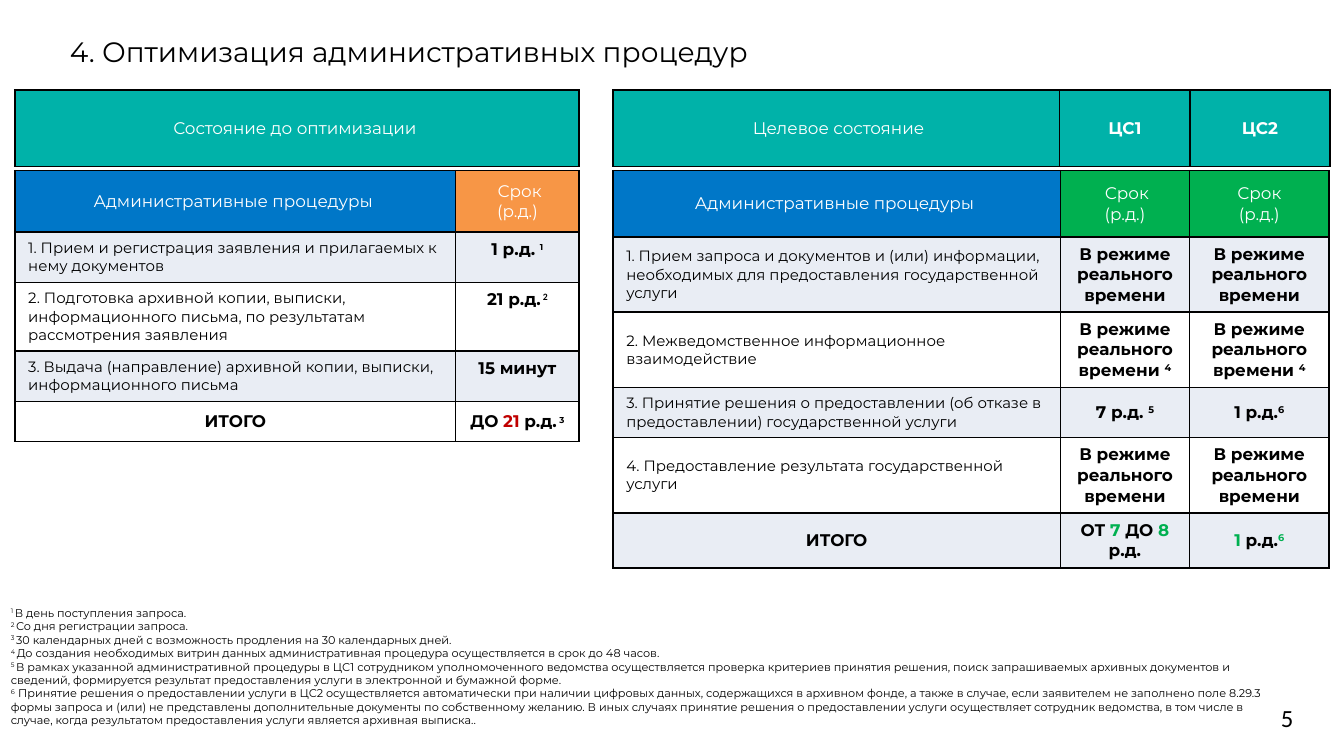
from lxml import etree
from pptx import Presentation
from pptx.dml.color import RGBColor
from pptx.enum.text import MSO_ANCHOR, PP_ALIGN
from pptx.oxml.ns import qn
from pptx.util import Pt

LEFT, CENTER = PP_ALIGN.LEFT, PP_ALIGN.CENTER
TOP, MIDDLE = MSO_ANCHOR.TOP, MSO_ANCHOR.MIDDLE
BLACK = RGBColor(0x00, 0x00, 0x00)
WHITE = RGBColor(0xFF, 0xFF, 0xFF)
TEAL = RGBColor(0x00, 0xB2, 0xA9)
BLUE = RGBColor(0x00, 0x77, 0xC8)
ORANGE = RGBColor(0xF7, 0x96, 0x46)
GREEN = RGBColor(0x00, 0xB0, 0x50)
RED = RGBColor(0xC0, 0x00, 0x00)
BAND = RGBColor(0xE9, 0xED, 0xF4)
FONT = "Montserrat"


def write(frame, paragraphs, align=LEFT, **base):
    """Each paragraph is a list of spans: a string or (string, changed settings)."""
    for index, spans in enumerate(paragraphs):
        para = frame.paragraphs[0] if index == 0 else frame.add_paragraph()
        para.alignment = align
        for item in spans:
            text, changes = (item, {}) if isinstance(item, str) else item
            style = {"font": FONT, "color": BLACK, "bold": False, "raised": False, **base, **changes}
            span = para.add_run()
            span.text = text
            span.font.name = style["font"]
            span.font.size = Pt(style["size"])
            span.font.bold = style["bold"]
            span.font.color.rgb = style["color"]
            if style["raised"]:
                span.font._element.set("baseline", "30000")


def add_grid(page, left, top, widths, heights, cells):
    """Each cell is (paragraphs, fill, anchor, text settings)."""
    table = page.shapes.add_table(len(heights), len(widths), Pt(left), Pt(top),
                                  Pt(sum(widths)), Pt(sum(heights))).table
    for column, width in zip(table.columns, widths):
        column.width = Pt(width)
    for row, height in zip(table.rows, heights):
        row.height = Pt(height)
    for r, line in enumerate(cells):
        for c, (paragraphs, fill, anchor, style) in enumerate(line):
            cell = table.cell(r, c)
            cell.vertical_anchor = anchor
            write(cell.text_frame, paragraphs, **style)
            # Black borders go before the fill in the cell properties
            props = cell._tc.get_or_add_tcPr()
            for side in ("a:lnL", "a:lnR", "a:lnT", "a:lnB"):
                border = etree.SubElement(props, qn(side), w=str(Pt(1)))
                solid = etree.SubElement(border, qn("a:solidFill"))
                etree.SubElement(solid, qn("a:srgbClr"), val=str(BLACK))
            cell.fill.solid()
            cell.fill.fore_color.rgb = fill


deck = Presentation()
deck.slide_width, deck.slide_height = Pt(720), Pt(405)
page = deck.slides.add_slide(deck.slide_layouts[6])

HEAD = {"align": CENTER, "size": 9, "color": WHITE}
STRONG = {"align": CENTER, "size": 9, "bold": True}
PLAIN = {"size": 8}
SMALL = {"raised": True, "size": 8}
RAISED = {"raised": True}
LEFT_X, RIGHT_X = 7.9, 328.3
BANNER_Y, BODY_Y = 48.3, 91.4
BANNER_HEIGHT = 41

# Banners above the two tables
add_grid(page, LEFT_X, BANNER_Y, [302.4], [BANNER_HEIGHT],
         [[([["Состояние до оптимизации "]], TEAL, MIDDLE, HEAD)]])
add_grid(page, RIGHT_X, BANNER_Y, [239.4, 69.8, 74.9], [BANNER_HEIGHT], [[
    ([[" Целевое состояние"]], TEAL, MIDDLE, HEAD),
    ([["ЦС1"]], TEAL, MIDDLE, {**HEAD, "bold": True}),
    ([["ЦС2"]], TEAL, MIDDLE, {**HEAD, "bold": True}),
]])

# State before optimisation
before = [
    ("1. Прием и регистрация заявления и прилагаемых к нему документов",
     ["1 р.д. ", ("1", SMALL)]),
    ("2. Подготовка архивной копии, выписки, информационного письма, по результатам "
     "рассмотрения заявления",
     ["21 р.д.", (" 2", {**RAISED, "font": "Calibri"})]),
    ("3. Выдача (направление) архивной копии, выписки, информационного письма",
     ["15 минут"]),
]
cells = [[([["Административные процедуры "]], BLUE, MIDDLE, HEAD),
          ([[" Срок"], ["(р.д.)"]], ORANGE, MIDDLE, HEAD)]]
for index, (step, term) in enumerate(before):
    fill = WHITE if index % 2 else BAND
    cells.append([([[step]], fill, TOP, PLAIN), ([term], fill, TOP, STRONG)])
cells.append([
    ([["ИТОГО"]], WHITE, MIDDLE, STRONG),
    ([["ДО", (" 21 ", {"color": RED}), "р.д.", (" 3", SMALL)]], WHITE, MIDDLE, STRONG),
])
add_grid(page, LEFT_X, BODY_Y, [236.2, 66.2], [33, 26.8, 36.6, 27, 21.6], cells)

# Target state
REAL_TIME = "В режиме реального времени"
after = [
    ("1. Прием запроса и документов и (или) информации, необходимых для предоставления "
     "государственной услуги", [REAL_TIME], [REAL_TIME]),
    ("2. Межведомственное информационное взаимодействие",
     [REAL_TIME + " ", ("4", RAISED)], [REAL_TIME + " ", ("4", RAISED)]),
    ("3. Принятие решения о предоставлении (об отказе в предоставлении) государственной услуги",
     ["7 р.д. ", ("5", RAISED)], ["1 р.д.", ("6", RAISED)]),
    ("4. Предоставление результата государственной услуги", [REAL_TIME], [REAL_TIME]),
]
cells = [[([["Административные процедуры "]], BLUE, MIDDLE, HEAD),
          ([[(" ", {"size": 8}), "Срок"], ["(р.д.)"]], GREEN, MIDDLE, HEAD),
          ([["Срок"], ["(р.д.)"]], GREEN, MIDDLE, HEAD)]]
for index, (step, *terms) in enumerate(after):
    fill = WHITE if index % 2 else BAND
    cells.append([([[step]], fill, MIDDLE, PLAIN)]
                 + [([term], fill, MIDDLE, STRONG) for term in terms])
accent = {"color": GREEN}
cells.append([
    ([["ИТОГО"]], BAND, MIDDLE, STRONG),
    ([["ОТ", (" 7 ", accent), "ДО", (" 8 ", accent), "р.д."]], BAND, MIDDLE, STRONG),
    ([[("1 ", accent), "р.д.", ("6", {**accent, **RAISED})]], BAND, MIDDLE, STRONG),
])
add_grid(page, RIGHT_X, BODY_Y, [239.8, 69.1, 74.9], [35.6, 40.2, 40.2, 26.8, 40.4, 29.2], cells)

# Title, footnotes and page number
notes = [
    ("1 ", "В день поступления запроса."),
    ("2 ", "Со дня регистрации запроса."),
    ("3 ", "30 календарных дней с возможность продления на 30 календарных дней."),
    ("4 ", "До создания необходимых витрин данных административная процедура осуществляется "
           "в срок до 48 часов."),
    ("5 ", "В рамках указанной административной процедуры в ЦС1 сотрудником уполномоченного "
           "ведомства осуществляется проверка критериев принятия решения, поиск запрашиваемых "
           "архивных документов и сведений, формируется результат предоставления услуги в "
           "электронной и бумажной форме."),
    ("6  ", "Принятие решения о предоставлении услуги в ЦС2 осуществляется автоматически при "
            "наличии цифровых данных, содержащихся в архивном фонде, а также в случае, если "
            "заявителем не заполнено поле 8.29.3 формы запроса и (или) не представлены "
            "дополнительные документы по собственному желанию. В иных случаях принятие решения "
            "о предоставлении услуги осуществляет сотрудник ведомства, в том числе в случае, "
            "когда результатом предоставления услуги является архивная выписка.."),
]
footnotes = [[(mark, RAISED), note] for mark, note in notes]
boxes = [
    (37.4, 18.7, 543.6, 26.6, TOP, [["4. Оптимизация административных процедур"]], {"size": 15}),
    (5.8, 324.7, 673.9, 75.6, TOP, footnotes, {"size": 6}),
    (686.2, 373.7, 33.8, 21.6, MIDDLE, [["5"]], {"size": 13.2, "font": "Calibri"}),
]
for left, top, width, height, anchor, paragraphs, style in boxes:
    box = page.shapes.add_textbox(Pt(left), Pt(top), Pt(width), Pt(height))
    frame = box.text_frame
    frame.word_wrap = True
    frame.vertical_anchor = anchor
    frame.margin_left = frame.margin_right = frame.margin_top = frame.margin_bottom = Pt(0)
    write(frame, paragraphs, **style)

deck.save("out.pptx")
